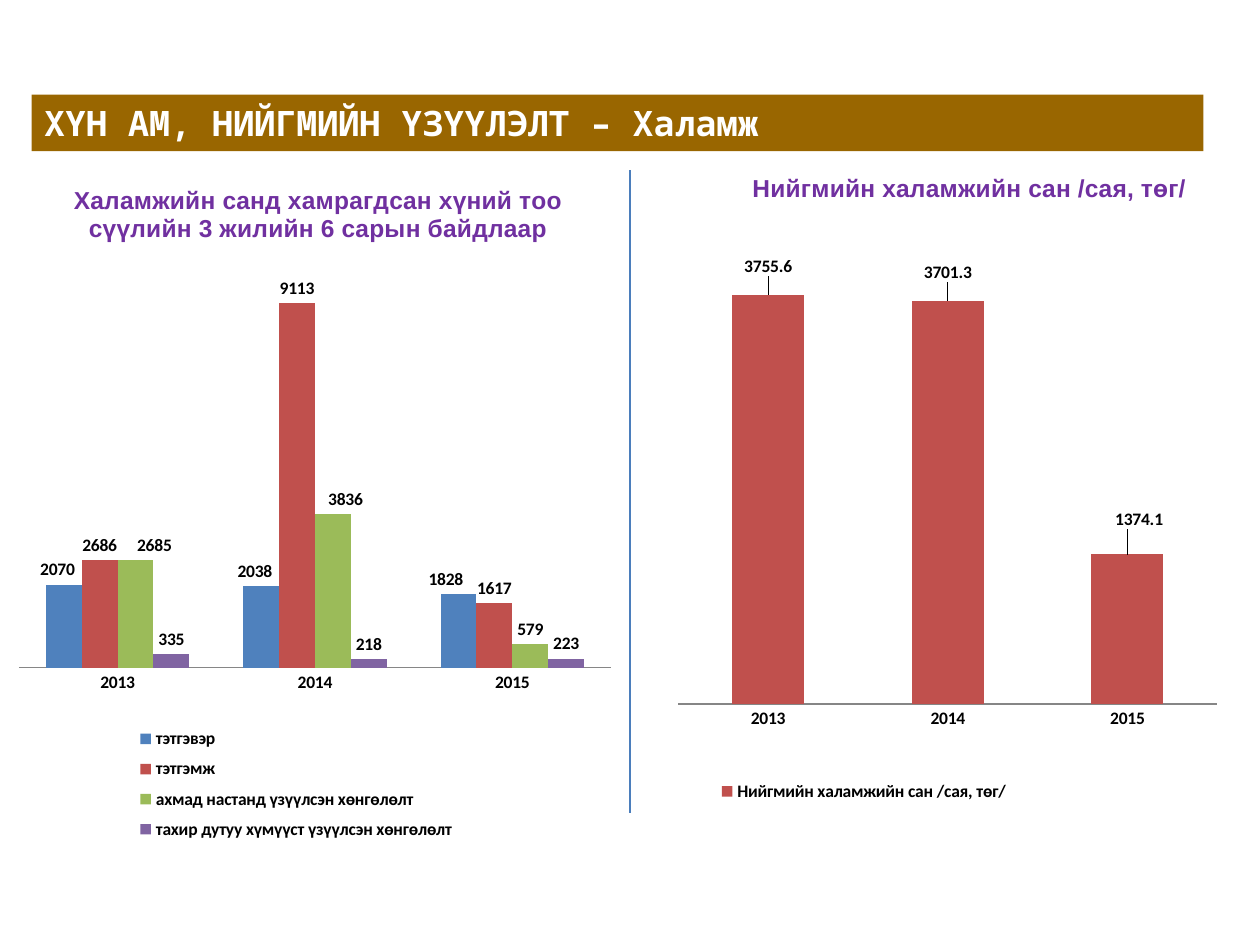
from lxml.etree import SubElement as Sub
from pptx import Presentation
from pptx.chart.data import CategoryChartData as Data
from pptx.dml.color import RGBColor as RGB
from pptx.enum.chart import XL_CHART_TYPE as Kind, XL_LABEL_POSITION as Spot
from pptx.enum.chart import XL_LEGEND_POSITION as Side, XL_TICK_MARK as Tick
from pptx.enum.shapes import MSO_CONNECTOR as Link
from pptx.enum.text import MSO_ANCHOR as Anchor, PP_ALIGN as Align
from pptx.oxml.ns import qn
from pptx.util import Inches, Pt

HUES = {"bar": "996600", "white": "FFFFFF", "rule": "4B7EBC", "head": "7030A0",
        "text": "000000", "axis": "868686", "blue": "4F81BD", "red": "C0504D",
        "green": "9BBB59", "plum": "8064A2"}


def style(font, name, size, hue):
    font.name, font.size, font.bold = name, Pt(size), True
    font.color.rgb = RGB.from_string(HUES[hue])


def place(part, slot, vals, mode="edge", inner=False):
    """Give a chart part a manual layout, as shares of the chart's size."""
    for old in part.findall(qn("c:layout")):
        part.remove(old)
    lay = part.makeelement(qn("c:layout"), {})
    part.insert(slot, lay)
    man = Sub(lay, qn("c:manualLayout"))
    if inner:
        Sub(man, qn("c:layoutTarget"), val="inner")
    for key in ("xMode", "yMode"):
        Sub(man, qn("c:" + key), val=mode)
    for key, val in zip("xywh", vals):
        Sub(man, qn("c:" + key), val=str(val))


deck = Presentation()
deck.slide_width, deck.slide_height = Inches(10), Inches(7.5)
W, H = deck.slide_width, deck.slide_height
slide = deck.slides.add_slide(deck.slide_layouts[5])

# Title bar
bar = slide.shapes.title
bar.left, bar.top = int(W * 0.025), int(H * 0.1)
bar.width, bar.height = int(W * 0.93), int(H * 0.06)
bar.fill.solid()
bar.fill.fore_color.rgb = RGB.from_string(HUES["bar"])
bar.text_frame.text = "ХҮН АМ, НИЙГМИЙН ҮЗҮҮЛЭЛТ – Халамж"
bar.text_frame.vertical_anchor = Anchor.MIDDLE
para = bar.text_frame.paragraphs[0]
para.alignment = Align.JUSTIFY
style(para.font, "Noto Sans Mono", 20, "white")

# Line between the two halves
rule = slide.shapes.add_connector(
    Link.STRAIGHT, W // 2, int(H * 0.18), W // 2, int(H * 0.86))
rule.line.color.rgb = RGB.from_string(HUES["rule"])
rule.line.width = Pt(0.75)
Sub(rule._element.spPr, qn("a:effectLst"))

# Each series: name, colour, values, label shifts by point
charts = [
    {"box": (0, 0.16, 0.5, 0.77), "top": 10000,
     "head": "Халамжийн санд хамрагдсан хүний тоо сүүлийн 3 жилийн 6 сарын байдлаар",
     "at": (0.11, 0.04), "plot": (0.03, 0.16, 0.94, 0.55),
     "key": (0.19, 0.78, 0.56, 0.18),
     "rows": [
         ("тэтгэвэр", "blue", (2070, 2038, 1828),
          {0: (-0.01, 0), 1: (-0.01, 0), 2: (-0.02, 0)}),
         ("тэтгэмж", "red", (2686, 9113, 1617), {}),
         ("ахмад настанд үзүүлсэн хөнгөлөлт", "green", (2685, 3836, 579),
          {0: (0.03, 0), 1: (0.02, 0)}),
         ("тахир дутуу хүмүүст үзүүлсэн хөнгөлөлт", "plum", (335, 218, 223), {}),
     ]},
    {"box": (0.52, 0.17, 0.46, 0.71), "top": 4000,
     "head": "Нийгмийн халамжийн сан /сая, төг/",
     "at": (0.16, 0.01), "plot": (0.04, 0.16, 0.93, 0.65),
     "key": (0.09, 0.91, 0.54, 0.06),
     "rows": [
         ("Нийгмийн халамжийн сан /сая, төг/", "red", (3755.6, 3701.3, 1374.1),
          {0: (0, -0.02), 1: (0, -0.02), 2: (0.02, -0.03)}),
     ]},
]

for item in charts:
    data = Data()
    data.categories = ["2013", "2014", "2015"]
    for name, hue, vals, moves in item["rows"]:
        data.add_series(name, vals)
    x, y, w, h = item["box"]
    chart = slide.shapes.add_chart(
        Kind.COLUMN_CLUSTERED, int(W * x), int(H * y), int(W * w), int(H * h), data).chart
    style(chart.font, "Calibri", 10, "text")

    chart.has_title = True
    head = chart.chart_title.text_frame
    head.text = item["head"]
    style(head.paragraphs[0].font, "Arial", 14, "head")

    chart.has_legend = True
    chart.legend.position = Side.TOP
    chart.legend.include_in_layout = False
    style(chart.legend.font, "Calibri", 10, "text")

    years, scale = chart.category_axis, chart.value_axis
    years.major_tick_mark = years.minor_tick_mark = Tick.NONE
    years.format.line.color.rgb = RGB.from_string(HUES["axis"])
    style(years.tick_labels.font, "Calibri", 10, "text")
    scale.visible = scale.has_major_gridlines = False
    scale.minimum_scale, scale.maximum_scale = 0, item["top"]

    plot = chart.plots[0]
    plot.gap_width, plot.overlap, plot.vary_by_categories = 150, 0, False
    for row, (name, hue, vals, moves) in zip(plot.series, item["rows"]):
        row.format.fill.solid()
        row.format.fill.fore_color.rgb = RGB.from_string(HUES[hue])
        tags = row.data_labels
        tags.show_value, tags.position = True, Spot.OUTSIDE_END
        style(tags.font, "Calibri", 10, "text")
        for num, move in moves.items():
            tag = row.points[num].data_label
            tag.position = Spot.OUTSIDE_END
            style(tag.font, "Calibri", 10, "text")
            spot = row._element.xpath(f"c:dLbls/c:dLbl[c:idx/@val='{num}']")[0]
            place(spot, 1, move, "factor")

    root = chart.element
    place(root.find(".//" + qn("c:plotArea")), 0, item["plot"], inner=True)
    place(root.find(".//" + qn("c:title")), 1, item["at"])
    place(root.find(".//" + qn("c:legend")), 1, item["key"])

deck.save("out.pptx")
